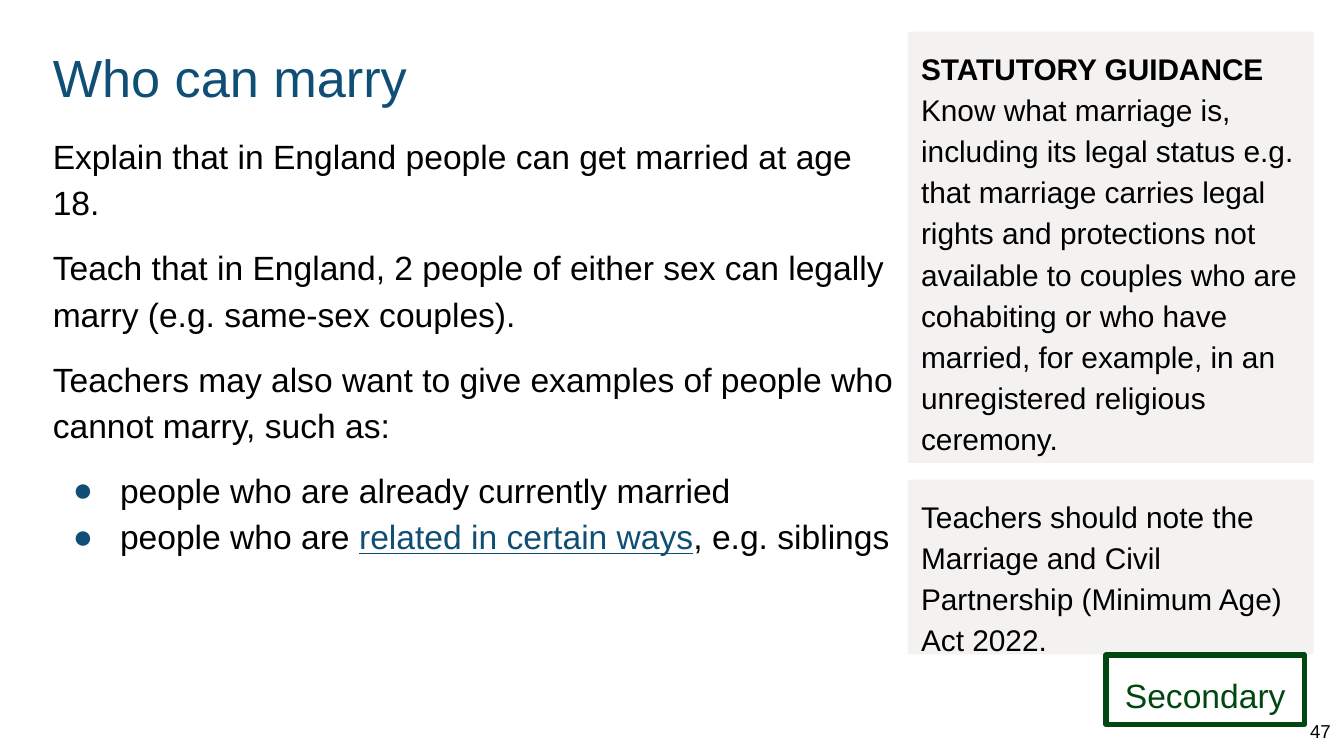
from dataclasses import dataclass
from typing import Optional

from lxml.etree import SubElement
from pptx import Presentation
from pptx.dml.color import RGBColor
from pptx.enum.shapes import MSO_SHAPE
from pptx.enum.text import MSO_ANCHOR, PP_ALIGN
from pptx.oxml.ns import qn
from pptx.util import Emu, Pt

PX = 4572  # EMU per px, 200 px to the inch
SLIDE_WIDTH, SLIDE_HEIGHT = 2000, 1125


@dataclass(frozen=True)
class Theme:
    font: str = "Arial"
    text: str = "000000"
    accent: str = "104F75"
    panel: str = "F3F2F1"
    tag: str = "004712"
    title_size: int = 28
    body_size: int = 18
    panel_size: int = 16
    number_size: int = 10
    tag_line: int = 3
    spacing: float = 1.15
    inset: int = 20
    bullet_margin: int = 100
    bullet_hang: int = 70


THEME = Theme()


@dataclass(frozen=True)
class Run:
    text: str
    color: str = THEME.text
    bold: bool = False
    underline: bool = False
    break_after: bool = False


@dataclass(frozen=True)
class Para:
    runs: tuple[Run, ...]
    before: int = 0
    bullet: bool = False


@dataclass(frozen=True)
class Block:
    left: int
    top: int
    width: int
    height: int
    size: int
    paras: tuple[Para, ...]
    fill: Optional[str] = None
    line: Optional[str] = None
    align: PP_ALIGN = PP_ALIGN.LEFT
    anchor: MSO_ANCHOR = MSO_ANCHOR.TOP
    spacing: float = THEME.spacing


def px(n: int) -> Emu:
    return Emu(n * PX)


def rgb(color: str) -> RGBColor:
    return RGBColor.from_string(color)


def add_bullet(p) -> None:
    pPr = p._p.get_or_add_pPr()
    pPr.set("marL", str(px(THEME.bullet_margin)))
    pPr.set("indent", str(-px(THEME.bullet_hang)))
    color = SubElement(pPr, qn("a:buClr"))
    SubElement(color, qn("a:srgbClr"), val=THEME.accent)
    SubElement(pPr, qn("a:buFont"), typeface=THEME.font)
    SubElement(pPr, qn("a:buChar"), char="●")


def add_run(p, run: Run, size: int) -> None:
    r = p.add_run()
    r.text = run.text
    r.font.name = THEME.font
    r.font.size = Pt(size)
    r.font.bold = run.bold
    r.font.underline = run.underline
    r.font.color.rgb = rgb(run.color)
    if run.break_after:
        p.add_line_break()


def add_text(tf, block: Block) -> None:
    tf.word_wrap = True
    tf.vertical_anchor = block.anchor
    tf.margin_left = tf.margin_right = px(THEME.inset)
    tf.margin_top = tf.margin_bottom = px(THEME.inset)
    for i, para in enumerate(block.paras):
        p = tf.add_paragraph() if i else tf.paragraphs[0]
        p.alignment = block.align
        p.line_spacing = block.spacing
        p.space_before = Pt(para.before)
        if para.bullet:
            add_bullet(p)
        for run in para.runs:
            add_run(p, run, block.size)


def add_block(s, block: Block) -> None:
    """Draw a rectangle if the block has a fill or line, else a text box."""
    box = [px(n) for n in (block.left, block.top, block.width, block.height)]
    if block.fill or block.line:
        sp = s.shapes.add_shape(MSO_SHAPE.RECTANGLE, *box)
        sp.shadow.inherit = False
    else:
        sp = s.shapes.add_textbox(*box)
    if block.fill:
        sp.fill.solid()
        sp.fill.fore_color.rgb = rgb(block.fill)
    else:
        sp.fill.background()
    if block.line:
        sp.line.color.rgb = rgb(block.line)
        sp.line.width = Pt(THEME.tag_line)
        SubElement(sp.line._ln, qn("a:round"))
    else:
        sp.line.fill.background()
    add_text(sp.text_frame, block)


TITLE = Block(59, 48, 1282, 126, THEME.title_size,
              (Para((Run("Who can marry", THEME.accent),)),), spacing=1.0)

BODY = Block(59, 173, 1292, 802, THEME.body_size, (
    Para((Run("Explain that in England people can get married at age 18."),)),
    Para((Run("Teach that in England, 2 people of either sex can legally "
              "marry (e.g. same-sex couples)."),), before=10),
    Para((Run("Teachers may also want to give examples of people who "
              "cannot marry, such as:"),), before=10),
    Para((Run("people who are already currently married"),),
         before=10, bullet=True),
    Para((Run("people who are "),
          Run("related in certain ways", THEME.accent, underline=True),
          Run(", e.g. siblings")), bullet=True),
))

GUIDANCE = Block(1351, 47, 604, 642, THEME.panel_size, (Para((
    Run("STATUTORY GUIDANCE", bold=True, break_after=True),
    Run("Know what marriage is, including its legal status e.g. that "
        "marriage carries legal rights and protections not available to "
        "couples who are cohabiting or who have married, for example, in an "
        "unregistered religious ceremony."),
)),), fill=THEME.panel)

ACT_NOTE = Block(1351, 714, 604, 260, THEME.panel_size, (Para((
    Run("Teachers should note the Marriage and Civil Partnership "
        "(Minimum Age) Act 2022."),
)),), fill=THEME.panel)

PHASE_TAG = Block(1646, 975, 295, 103, THEME.body_size,
                  (Para((Run("Secondary", THEME.tag),)),),
                  line=THEME.tag, align=PP_ALIGN.CENTER)

PAGE_NUMBER = Block(1922, 1052, 78, 73, THEME.number_size,
                    (Para((Run("47"),)),), align=PP_ALIGN.RIGHT,
                    anchor=MSO_ANCHOR.MIDDLE, spacing=1.0)


def main() -> None:
    prs = Presentation()
    prs.slide_width, prs.slide_height = px(SLIDE_WIDTH), px(SLIDE_HEIGHT)
    s = prs.slides.add_slide(prs.slide_layouts[6])
    for block in (TITLE, BODY, GUIDANCE, ACT_NOTE, PHASE_TAG, PAGE_NUMBER):
        add_block(s, block)
    prs.save("out.pptx")


if __name__ == "__main__":
    main()
